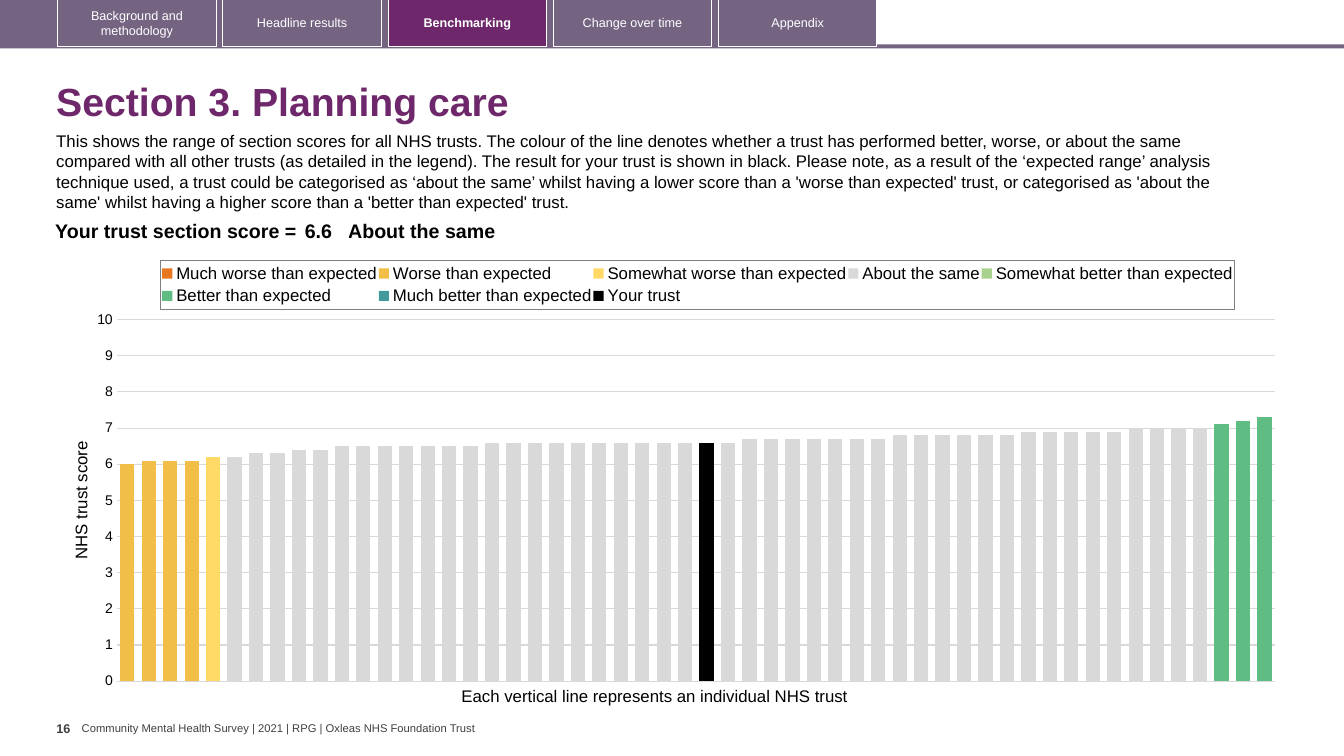
from copy import deepcopy

from pptx import Presentation
from pptx.chart.data import CategoryChartData
from pptx.dml.color import RGBColor
from pptx.enum.chart import XL_CHART_TYPE, XL_LEGEND_POSITION, XL_TICK_MARK
from pptx.enum.shapes import MSO_SHAPE
from pptx.enum.text import MSO_ANCHOR, PP_ALIGN
from pptx.oxml import parse_xml
from pptx.oxml.ns import nsdecls
from pptx.util import Inches, Pt

WIDTH, HEIGHT = Inches(13.33), Inches(7.5)
COLOURS = {"band": "756382", "plum": "6D276A", "white": "FFFFFF", "black": "000000",
           "grey": "404040", "grid": "D9D9D9", "frame": "7F7F7F"}
TABS = ["Background and methodology", "Headline results", "Benchmarking",
        "Change over time", "Appendix"]
ACTIVE_TAB = "Benchmarking"
INTRO = ("This shows the range of section scores for all NHS trusts. The colour of the line "
         "denotes whether a trust has performed better, worse, or about the same compared with "
         "all other trusts (as detailed in the legend). The result for your trust is shown in "
         "black. Please note, as a result of the ‘expected range’ analysis technique used, a "
         "trust could be categorised as ‘about the same’ whilst having a lower score than a "
         "'worse than expected' trust, or categorised as 'about the same' whilst having a higher "
         "score than a 'better than expected' trust.")
TRUSTS = 54
ABOUT_THE_SAME = ([6.2] + [6.3] * 2 + [6.4] * 2 + [6.5] * 7 + [6.6] * 12 + [6.7] * 7
                  + [6.8] * 6 + [6.9] * 5 + [7] * 4)
BANDS = [("Much worse than expected", "E87722", 0, []),
         ("Worse than expected", "F1BE48", 0, [6, 6.1, 6.1, 6.1]),
         ("Somewhat worse than expected", "FFD966", 4, [6.2]),
         ("About the same", "D9D9D9", 5, ABOUT_THE_SAME),
         ("Somewhat better than expected", "A9D18E", 0, []),
         ("Better than expected", "5FBD83", 51, [7.1, 7.2, 7.3]),
         ("Much better than expected", "419999", 0, []),
         ("Your trust", "000000", 27, [6.6])]


def colour(name):
    """Return the colour for a palette name or a hex string."""
    return RGBColor.from_string(COLOURS.get(name, name))


def place(left, top, width, height):
    """Turn percentages of the slide into lengths."""
    sides = (WIDTH, HEIGHT, WIDTH, HEIGHT)
    return [round(side * share / 100) for side, share in zip(sides, (left, top, width, height))]


def style_font(font, size, shade="black", bold=False):
    """Apply size, colour and weight to a font."""
    for name, value in {"name": "Arial", "size": Pt(size), "bold": bold}.items():
        setattr(font, name, value)
    font.color.rgb = colour(shade)


def write(frame, text, size, shade="black", bold=False, **paragraph_format):
    """Write one styled paragraph into a text frame."""
    para = frame.paragraphs[0]
    for name, value in paragraph_format.items():
        setattr(para, name, value)
    span = para.add_run()
    span.text = text
    style_font(span.font, size, shade, bold)


def add_text(page, area, text, size, shade="black", bold=False, frame_format=None, **paragraph_format):
    """Add a text box."""
    frame = page.shapes.add_textbox(*place(*area)).text_frame
    for name, value in {"word_wrap": True, **(frame_format or {})}.items():
        setattr(frame, name, value)
    write(frame, text, size, shade, bold, **paragraph_format)


def add_block(page, area, fill=None, line=None):
    """Add a rectangle with an optional fill and outline."""
    block = page.shapes.add_shape(MSO_SHAPE.RECTANGLE, *place(*area))
    block.shadow.inherit = False
    if fill:
        block.fill.solid()
        block.fill.fore_color.rgb = colour(fill)
    else:
        block.fill.background()
    if line:
        block.line.color.rgb = colour(line)
        block.line.width = Pt(0.75)
    else:
        block.line.fill.background()
    return block


def add_navigation(page):
    """Add the band of section tabs."""
    add_block(page, (0, 5.87, 100, 0.53), "band")
    add_block(page, (0, 0, 65.25, 6.27), "band")
    for column, label in enumerate(TABS):
        active = label == ACTIVE_TAB
        tab = add_block(page, (4.3 + 12.29 * column, -0.13, 11.78, 6.27),
                        "plum" if active else None, "white")
        tab.text_frame.word_wrap = True
        tab.text_frame.vertical_anchor = MSO_ANCHOR.MIDDLE
        write(tab.text_frame, label, 9, "white", active, alignment=PP_ALIGN.CENTER)


def add_score(page):
    """Add the one-row table with the section score."""
    table = page.shapes.add_table(1, 3, *place(2.65, 28.67, 87.75, 4.13)).table
    table.first_row = table.horz_banding = False
    cells = [("Your trust section score =", 2.63, 0.04, PP_ALIGN.RIGHT),
             ("6.6", 0.47, 0.04, PP_ALIGN.LEFT),
             ("About the same", 8.59, 0, PP_ALIGN.LEFT)]
    for index, (text, width, side, alignment) in enumerate(cells):
        table.columns[index].width = Inches(width)
        cell = table.cell(0, index)
        cell.fill.background()
        cell.margin_left = cell.margin_right = Inches(side)
        cell.margin_top = cell.margin_bottom = Inches(0.04)
        write(cell.text_frame, text, 14, bold=True, alignment=alignment)


def layout(*area, inner=False):
    """Build a manual chart layout from percentages of the chart."""
    left, top, width, height = (round(share / 100, 4) for share in area)
    target = '<c:layoutTarget val="inner"/>' if inner else ""
    return parse_xml(
        f'<c:layout {nsdecls("c")}><c:manualLayout>{target}<c:xMode val="edge"/>'
        f'<c:yMode val="edge"/><c:x val="{left}"/><c:y val="{top}"/>'
        f'<c:w val="{width}"/><c:h val="{height}"/></c:manualLayout></c:layout>')


def style_legend(chart):
    """Put a framed legend above the bars."""
    chart.has_legend = True
    chart.legend.position = XL_LEGEND_POSITION.TOP
    chart.legend.include_in_layout = False
    style_font(chart.legend.font, 12)
    legend = chart.element.xpath(".//c:legend")[0]
    for old in legend.xpath("./c:layout"):
        legend.remove(old)
    legend.xpath("./c:legendPos")[0].addnext(layout(7.6, 2.5, 87.7, 11))
    legend.xpath("./c:txPr")[0].addprevious(parse_xml(
        f'<c:spPr {nsdecls("c", "a")}><a:ln w="9525"><a:solidFill>'
        f'<a:srgbClr val="{COLOURS["frame"]}"/></a:solidFill></a:ln></c:spPr>'))


def style_axes(chart):
    """Hide the category axis and format the score axis."""
    chart.category_axis.visible = False
    axis = chart.value_axis
    scale = {"minimum_scale": 0, "maximum_scale": 10, "major_unit": 1,
             "major_tick_mark": XL_TICK_MARK.NONE, "minor_tick_mark": XL_TICK_MARK.NONE}
    for name, value in scale.items():
        setattr(axis, name, value)
    axis.format.line.fill.background()
    axis.major_gridlines.format.line.color.rgb = colour("grid")
    axis.major_gridlines.format.line.width = Pt(0.75)
    axis.tick_labels.number_format = "0"
    axis.tick_labels.number_format_is_linked = False
    style_font(axis.tick_labels.font, 10)
    write(axis.axis_title.text_frame, "NHS trust score", 12)


def move_to_right_axis(chart):
    """Move the last series to bars on a second, unlabelled axis."""
    area = chart.element.xpath(".//c:plotArea")[0]
    bars = area.xpath("./c:barChart")[0]
    second = deepcopy(bars)
    for series in second.xpath("./c:ser")[:-1]:
        second.remove(series)
    bars.remove(bars.xpath("./c:ser")[-1])
    bars.addnext(second)
    axes = [deepcopy(axis) for axis in area.xpath("./c:catAx | ./c:valAx")]
    area.xpath("./c:valAx")[0].addnext(axes[0])
    axes[0].addnext(axes[1])
    numbers = {}
    for part in (second, *axes):
        for tag in part.xpath("./c:axId | ./c:crossAx"):
            tag.set("val", numbers.setdefault(tag.get("val"), str(5001 + len(numbers))))
    for old in axes[1].xpath("./c:majorGridlines | ./c:title"):
        axes[1].remove(old)
    for tag, value in {"axPos": "r", "majorTickMark": "out", "tickLblPos": "none",
                       "crosses": "max"}.items():
        axes[1].xpath(f"./c:{tag}")[0].set("val", value)


def add_score_chart(page):
    """Add the column chart of all trust scores."""
    data = CategoryChartData()
    data.categories = [str(trust + 1) for trust in range(TRUSTS)]
    for name, _, start, scores in BANDS:
        data.add_series(name, [None] * start + scores + [None] * (TRUSTS - start - len(scores)))
    chart = page.shapes.add_chart(XL_CHART_TYPE.COLUMN_CLUSTERED,
                                  *place(5.03, 32.93, 91.13, 59.2), data).chart
    chart.has_title = False
    chart.font.name, chart.font.size = "Calibri", Pt(10)
    plot = chart.plots[0]
    for name, value in {"gap_width": 50, "overlap": 100, "vary_by_categories": False}.items():
        setattr(plot, name, value)
    for series, (_, shade, _, _) in zip(plot.series, BANDS):
        series.invert_if_negative = False
        series.format.fill.solid()
        series.format.fill.fore_color.rgb = colour(shade)
    style_legend(chart)
    style_axes(chart)
    move_to_right_axis(chart)
    area = chart.element.xpath(".//c:plotArea")[0]
    for old in area.xpath("./c:layout"):
        area.remove(old)
    area.insert(0, layout(4, 15.8, 94.6, 80.8, inner=True))


def main():
    """Build the slide and save it."""
    deck = Presentation()
    deck.slide_width, deck.slide_height = WIDTH, HEIGHT
    page = deck.slides.add_slide(deck.slide_layouts[6])
    middle = {"vertical_anchor": MSO_ANCHOR.MIDDLE}
    flush = {"word_wrap": False, "margin_left": 0, "margin_right": 0}
    add_text(page, (6.08, 95.47, 29.7, 1.73),
             "Community Mental Health Survey | 2021 | RPG | Oxleas NHS Foundation Trust", 8, "grey",
             frame_format={**middle, **flush, "margin_top": 0, "margin_bottom": 0})
    add_navigation(page)
    add_text(page, (3.45, 8.93, 93.68, 9.6), "Section 3. Planning care", 28, "plum", True,
             middle, line_spacing=0.9)
    add_text(page, (4.2, 94.67, 1.88, 5.33), "16", 9, "grey", True, flush)
    add_text(page, (3.45, 16.67, 90.98, 12.13), INTRO, 12)
    add_text(page, (33.6, 90, 30.83, 4), "Each vertical line represents an individual NHS trust", 12,
             frame_format={"word_wrap": False})
    add_score_chart(page)
    add_score(page)
    deck.save("out.pptx")


if __name__ == "__main__":
    main()
